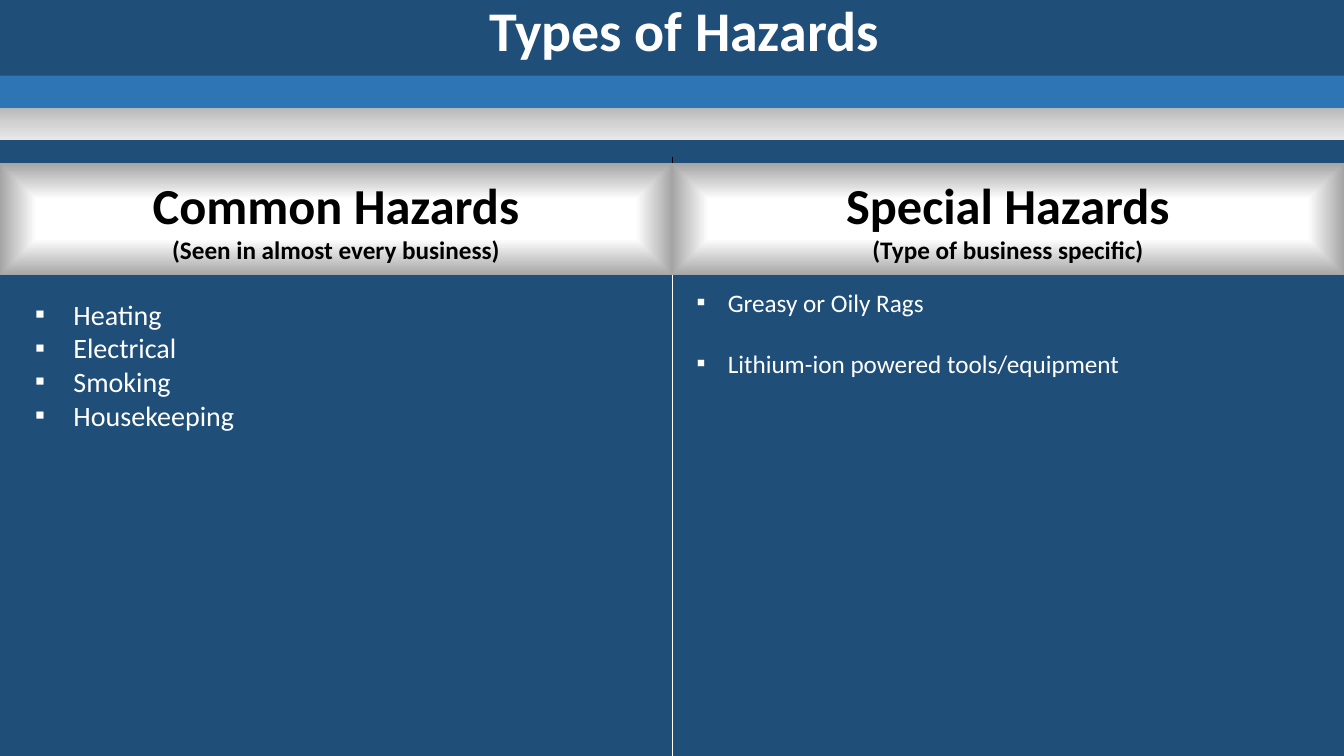
"""Build the Types of Hazards slide: title bands, two headed columns and their bullet lists."""
from lxml import etree
from pptx import Presentation
from pptx.dml.color import RGBColor
from pptx.enum.shapes import MSO_CONNECTOR as CONN, MSO_SHAPE as SHAPE
from pptx.enum.text import MSO_ANCHOR as ANCHOR, PP_ALIGN as ALIGN
from pptx.oxml import parse_xml
from pptx.oxml.ns import nsdecls, qn
from pptx.util import Inches, Pt


def rgb(code):
    return RGBColor.from_string(code)


def write(tf, text, size, color="FFFFFF", bold=False, align=ALIGN.LEFT, first=False, indent=0, before=0):
    p = tf.paragraphs[0] if first else tf.add_paragraph()
    p.alignment = align
    p.space_before = Pt(before)
    if indent:
        pPr = p._p.get_or_add_pPr()
        pPr.set("marL", str(Inches(indent)))
        pPr.set("indent", str(-Inches(indent)))
        etree.SubElement(pPr, qn("a:buFont")).set("typeface", "Wingdings")
        pPr[-1].set("typeface", "Calibri")
        etree.SubElement(pPr, qn("a:buChar")).set("char", "▪")
    r = p.add_run()
    r.text = text
    r.font.name, r.font.size, r.font.bold = "Calibri", Pt(size), bold
    r.font.color.rgb = rgb(color)


prs = Presentation()
prs.slide_width, prs.slide_height = Inches(13.33), Inches(7.5)
W, H = prs.slide_width, prs.slide_height
MID = W // 2
s = prs.slides.add_slide(prs.slide_layouts[6])
s.background.fill.solid()
s.background.fill.fore_color.rgb = rgb("1F4E79")

BAND = Inches(0.32)
BAND_TOP = Inches(0.75)
HEAD_TOP, HEAD_H = Inches(1.62), Inches(1.11)
LIST_TOP = Inches(2.67)

DOWN = '<a:lin ang="5400000" scaled="0"/>'
INWARD = '<a:path path="shape"><a:fillToRect l="50000" t="50000" r="50000" b="50000"/></a:path>'
silver = [(0, "B8B8B8"), (50, "D3D3D3"), (100, "E9E9E9")]
bevel = [(0, "FFFFFF"), (35, "FFFFFF"), (100, "A5A5A5")]

panels = [
    (0, BAND_TOP, W, BAND, [(0, "2E75B6"), (100, "2E75B6")], DOWN, []),
    (0, BAND_TOP + BAND, W, BAND, silver, DOWN, []),
    (0, HEAD_TOP, MID, HEAD_H, bevel, INWARD, ["Common Hazards", "(Seen in almost every business)"]),
    (MID, HEAD_TOP, MID, HEAD_H, bevel, INWARD, ["Special Hazards", "(Type of business specific)"]),
]
lists = [
    (Inches(0.25), Inches(2.9), Inches(3.93), Inches(1.45), 20, 0.38, 0,
     ["Heating", "Electrical", "Smoking", "Housekeeping"]),
    (Inches(6.81), Inches(2.8), W - Inches(6.81), Inches(1.21), 18, 0.31, 22,
     ["Greasy or Oily Rags", "Lithium-ion powered tools/equipment"]),
]

for x, y, w, h, size, indent, gap, items in lists:
    tf = s.shapes.add_textbox(x, y, w, h).text_frame
    tf.word_wrap = True
    for i, item in enumerate(items):
        write(tf, item, size, first=i == 0, indent=indent, before=gap if i else 0)

for top, bottom, color in [(LIST_TOP, H, "FFFFFF"), (Inches(1.56), LIST_TOP, "000000")]:
    line = s.shapes.add_connector(CONN.STRAIGHT, MID, top, MID, bottom)
    line.line.color.rgb = rgb(color)
    line.line.width = Pt(0.5)
    etree.SubElement(line._element.spPr, qn("a:effectLst"))

title = s.shapes.add_textbox(Inches(3.42), Inches(-0.18), Inches(6.73), Inches(0.93))
title.text_frame.word_wrap = True
title.text_frame.vertical_anchor = ANCHOR.MIDDLE
write(title.text_frame, "Types of Hazards", 40, bold=True, align=ALIGN.CENTER, first=True)

for x, y, w, h, stops, direction, texts in panels:
    sp = s.shapes.add_shape(SHAPE.RECTANGLE, x, y, w, h)
    sp.shadow.inherit = False
    sp.line.fill.background()
    if len(stops) == 2:
        sp.fill.solid()
        sp.fill.fore_color.rgb = rgb(stops[0][1])
    else:
        sp.fill.background()
        marks = "".join(f'<a:gs pos="{pos * 1000}"><a:srgbClr val="{color}"/></a:gs>' for pos, color in stops)
        grad = f'<a:gradFill {nsdecls("a")} rotWithShape="1"><a:gsLst>{marks}</a:gsLst>{direction}</a:gradFill>'
        spPr = sp._element.spPr
        spPr.replace(spPr.find(qn("a:noFill")), parse_xml(grad))
    sp.text_frame.vertical_anchor = ANCHOR.MIDDLE
    for i, (text, size) in enumerate(zip(texts, (36, 18))):
        write(sp.text_frame, text, size, "000000", bold=True, align=ALIGN.CENTER, first=i == 0)

prs.save("out.pptx")
